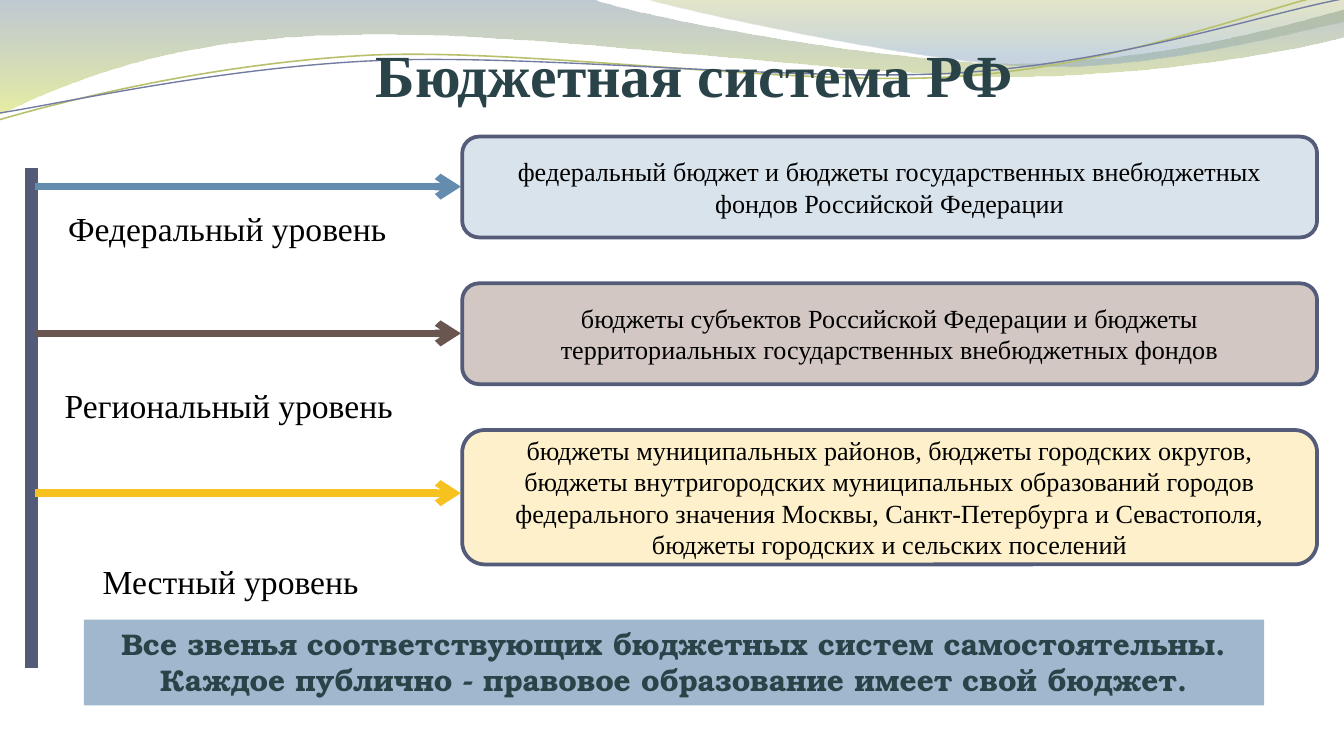
import math
from dataclasses import dataclass

from lxml import etree
from pptx import Presentation
from pptx import util as u
from pptx.dml.color import RGBColor
from pptx.enum import shapes, text
from pptx.oxml.ns import qn

Pt = u.Pt


@dataclass(frozen=True)
class Theme:
    font: str = "Times New Roman"
    banner_font: str = "TeX Gyre Bonum"
    title_size: int = 32
    label_size: int = 18
    banner_size: int = 16
    body_size: int = 14
    ink: str = "000000"
    accent: str = "294349"
    outline: str = "545C79"
    bar: str = "545B79"
    banner: str = "9FB8CD"
    # Gradient stops: position, colour, opacity in percent
    wide_wave: tuple = ((0, "72889B", 45), (1, "D3DE57", 55))
    right_wave: tuple = ((0, "A4AC50", 30), (0.8, "84A3BD", 45))
    green_line: str = "B9C06C"
    blue_line: str = "727CA3"


THEME = Theme()

# Each wave starts at a point; pairs are lines, sixes are Bezier curves
WIDE_WAVE = [(0, 0), (316.8, -0.7),
             (342.7, 9.4, 478.1, 33.8, 545.8, 33.8),
             (614.2, 33.8, 689.8, 13.7, 720, 5), (720.7, 19.4),
             (707.8, 23.8, 626.4, 41, 537.1, 41),
             (447.8, 40.3, 275, 15.1, 185, 18.7),
             (92.9, 19.4, 33.1, 44.6, -0.7, 61.2), (0, 0)]
RIGHT_WAVE = [(344.9, -0.7), (366.5, 5.8, 491, 33.1, 553.7, 35.3),
              (616.3, 37.4, 691.9, 17.3, 720, 11.5), (720, 0), (344.9, -0.7)]
GREEN_LINE = [(0, 64.1), (34.6, 54, 113.8, 33.8, 199.4, 29.5),
              (285.1, 25.9, 426.2, 46.8, 512.6, 41),
              (599.8, 35.3, 676.1, 4.3, 718.6, -5)]
BLUE_LINE = [(0, 60.5), (33.8, 55.4, 118.1, 36, 203.8, 32.4),
             (290.2, 28.8, 429.8, 44.6, 516.2, 38.9),
             (601.9, 33.1, 677.5, 7.2, 720, -0.7)]

# Label, its indent and width, budgets, box height, arrow drop, colours
LEVELS = [
    ("Федеральный уровень", 12.5, 187.2,
     "федеральный бюджет и бюджеты государственных внебюджетных фондов "
     "Российской Федерации", 54, 26.8, "D9E3EB", "638CAE"),
    ("Региональный уровень", 10.7, 192.2,
     "бюджеты субъектов Российской Федерации и бюджеты территориальных "
     "государственных внебюджетных фондов", 54, 26.8, "D2C7C3", "6A5650"),
    ("Местный уровень", 31, 153.4,
     "бюджеты муниципальных районов, бюджеты городских округов, бюджеты "
     "внутригородских муниципальных образований городов федерального значения "
     "Москвы, Санкт-Петербурга и Севастополя, бюджеты городских и сельских "
     "поселений", 72, 33.8, "FDF0CA", "F7C120"),
]


def write(frame, *lines, size, font=THEME.font, color=THEME.ink, bold=False,
          align=text.PP_ALIGN.CENTER, anchor=text.MSO_ANCHOR.MIDDLE, wrap=True,
          fit=text.MSO_AUTO_SIZE.NONE):
    frame.word_wrap, frame.auto_size = wrap, fit
    frame.vertical_anchor = anchor
    for index, line in enumerate(lines):
        para = frame.add_paragraph() if index else frame.paragraphs[0]
        para.alignment = align
        span = para.add_run()
        span.text = line
        span.font.size, span.font.name, span.font.bold = Pt(size), font, bold
        span.font.color.rgb = RGBColor.from_string(color)


def set_line(line, color, width):
    if color is None:
        line.fill.background()
        return
    line.color.rgb = RGBColor.from_string(color)
    line.width = Pt(width)


def add_box(page, kind, box, fill, line=None):
    shape = page.shapes.add_shape(kind, *map(Pt, box))
    shape.shadow.inherit = False
    shape.fill.solid()
    shape.fill.fore_color.rgb = RGBColor.from_string(fill)
    set_line(shape.line, line, 2)
    return shape


def add_line(page, start, end, color, width, arrow=False):
    line = page.shapes.add_connector(
        shapes.MSO_CONNECTOR.STRAIGHT, *map(Pt, start + end))
    set_line(line.line, color, width)
    if arrow:
        ln = line.element.spPr.find(qn("a:ln"))
        etree.SubElement(ln, qn("a:tailEnd"), type="arrow")
    etree.SubElement(line.element.spPr, qn("a:effectLst"))


def fill_gradient(shape, stops):
    shape.fill.gradient()
    shape.fill.gradient_angle = 270
    for stop, (position, color, opacity) in zip(shape.fill.gradient_stops, stops):
        stop.position = position
        stop.color.rgb = RGBColor.from_string(color)
    for node, stop in zip(shape.element.spPr.iter(qn("a:srgbClr")), stops):
        etree.SubElement(node, qn("a:alpha"), val=str(stop[2] * 1000))


def add_wave(page, box, segments, stops=None, line=None, width=1, turn=0):
    left, top, box_width, box_height = box
    middle_x, middle_y = left + box_width / 2, top + box_height / 2
    sine, cosine = math.sin(math.radians(turn)), math.cos(math.radians(turn))

    def local(x, y):
        """Place a page point in the box as it lies before it is turned."""
        x, y = x - middle_x, y - middle_y
        return (Pt(x * cosine + y * sine + box_width / 2),
                Pt(y * cosine - x * sine + box_height / 2))

    ends = [local(*segment[-2:]) for segment in segments]
    builder = page.shapes.build_freeform(*ends[0])
    builder.add_line_segments(ends[1:], close=stops is not None)
    wave = builder.convert_to_shape()
    wave.left, wave.top, wave.width, wave.height = map(Pt, box)
    wave.rotation = turn
    # Bezier segments in the coordinates of the box
    outline = next(wave.element.iter(qn("a:path")))
    outline.clear()
    outline.set("w", str(Pt(box_width)))
    outline.set("h", str(Pt(box_height)))
    for index, segment in enumerate(segments):
        tag = "a:cubicBezTo" if len(segment) == 6 else "a:lnTo"
        step = etree.SubElement(outline, qn(tag if index else "a:moveTo"))
        for x, y in zip(segment[::2], segment[1::2]):
            x, y = local(x, y)
            etree.SubElement(step, qn("a:pt"), x=str(x), y=str(y))
    wave.shadow.inherit = False
    set_line(wave.line, line, width)
    if stops:
        etree.SubElement(outline, qn("a:close"))
        fill_gradient(wave, stops)
    else:
        wave.fill.background()


def draw_waves(page, box):
    left, top, width, height = box
    add_wave(page, (left, top, width, height), WIDE_WAVE, stops=THEME.wide_wave)
    add_wave(page, (left + 345.6, top, 375.1, 37.4), RIGHT_WAVE,
             stops=THEME.right_wave)
    add_wave(page, (left - 0.7, top + 12.9, width, 38.2), GREEN_LINE,
             line=THEME.green_line, width=0.85, turn=-2.7)
    add_wave(page, (left - 0.7, top + 17.3, width + 0.7, 31), BLUE_LINE,
             line=THEME.blue_line, width=0.75, turn=-2.7)


def draw_title(page, box):
    title = page.shapes.title
    title.left, title.top, title.width, title.height = map(Pt, box)
    write(title.text_frame, "Бюджетная система РФ", size=THEME.title_size,
          color=THEME.accent, bold=True)
    title.element.getparent().append(title.element)  # in front of the waves


def draw_levels(page, box):
    left, top, width, height = box
    box_left, box_width = left + 230.7, 458
    # Vertical bar that the arrows leave from
    add_line(page, (left, top + 16.8), (left, top + height), THEME.bar, 7)
    for index, level in enumerate(LEVELS):
        label, indent, label_width, budgets, box_height, drop, fill, color = level
        box_top = top + 78.6 * index
        # Budgets of the level
        shape = add_box(page, shapes.MSO_SHAPE.ROUNDED_RECTANGLE,
                        (box_left, box_top, box_width, box_height),
                        fill, THEME.outline)
        write(shape.text_frame, budgets, size=THEME.body_size)
        # Name of the level
        caption = page.shapes.add_textbox(
            Pt(left + indent), Pt(top + 34.8 + 94.6 * index),
            Pt(label_width), Pt(29))
        write(caption.text_frame, label, size=THEME.label_size, wrap=False,
              align=text.PP_ALIGN.LEFT, anchor=text.MSO_ANCHOR.TOP,
              fit=text.MSO_AUTO_SIZE.SHAPE_TO_FIT_TEXT)
        # Arrow from the bar to the budgets
        add_line(page, (left + 1.8, box_top + drop), (box_left - 0.7, box_top + drop),
                 color, 4, arrow=True)


def draw_banner(page, box):
    banner = add_box(page, shapes.MSO_SHAPE.RECTANGLE, box, THEME.banner)
    write(banner.text_frame,
          "Все звенья соответствующих бюджетных систем самостоятельны.",
          "Каждое публично - правовое образование имеет свой бюджет.",
          size=THEME.banner_size, font=THEME.banner_font, color=THEME.accent,
          bold=True, anchor=text.MSO_ANCHOR.TOP,
          fit=text.MSO_AUTO_SIZE.SHAPE_TO_FIT_TEXT)


def main():
    deck = Presentation()
    deck.slide_width, deck.slide_height = Pt(720), Pt(405)
    page = deck.slides.add_slide(deck.slide_layouts.get_by_name("Title Only"))
    draw_waves(page, (-0.7, -0.7, 721.4, 61.2))
    draw_levels(page, (16.9, 73.2, 689, 284.6))
    draw_title(page, (129.6, 16.6, 485.3, 45.4))
    draw_banner(page, (44.9, 331.9, 632.4, 46))
    deck.save("out.pptx")


if __name__ == "__main__":
    main()
